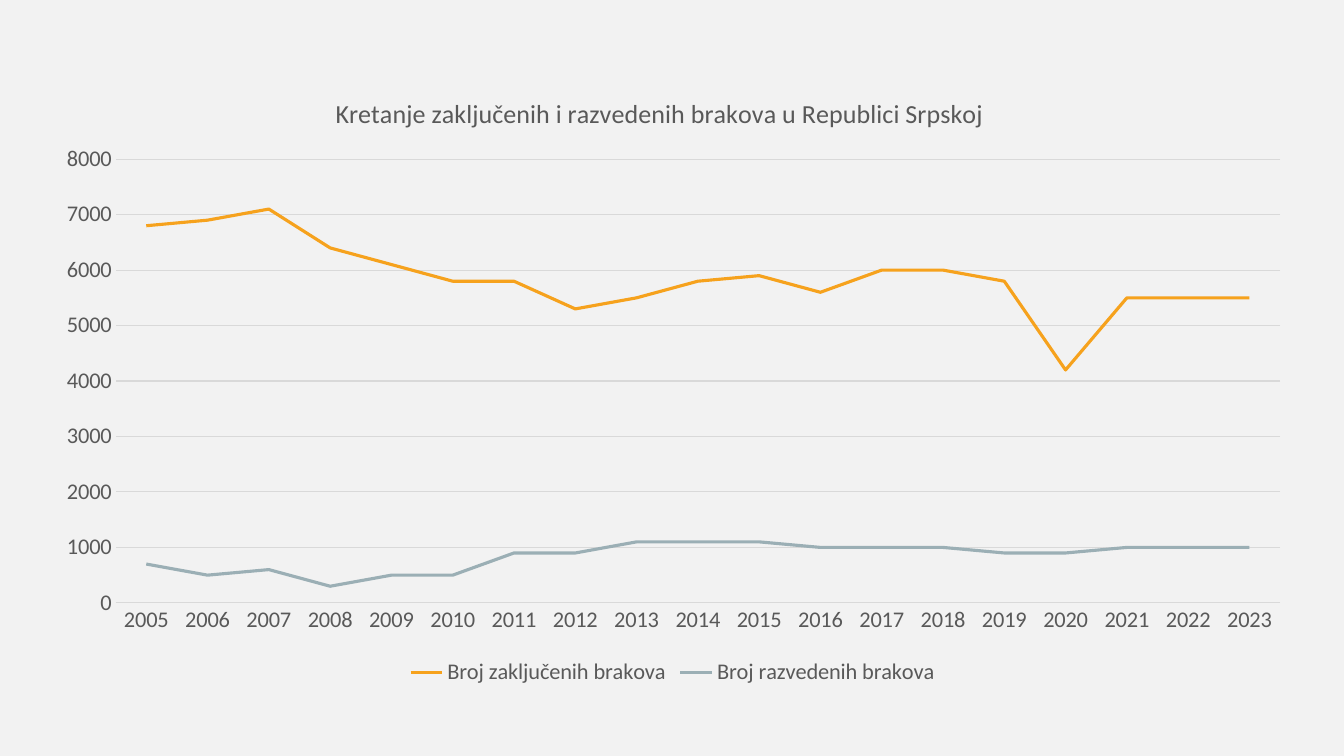
from lxml.etree import SubElement
from pptx import Presentation
from pptx.chart.data import CategoryChartData
from pptx.dml.color import RGBColor
from pptx.enum.chart import XL_CHART_TYPE, XL_LEGEND_POSITION, XL_MARKER_STYLE, XL_TICK_MARK
from pptx.oxml.ns import qn
from pptx.util import Cm, Pt

# Content
TITLE = "Kretanje zaključenih i razvedenih brakova u Republici Srpskoj"
YEARS = [str(year) for year in range(2005, 2024)]
SERIES = [
    ("Broj zaključenih brakova", "orange",
     (6800, 6900, 7100, 6400, 6100, 5800, 5800, 5300, 5500, 5800,
      5900, 5600, 6000, 6000, 5800, 4200, 5500, 5500, 5500)),
    ("Broj razvedenih brakova", "steel",
     (700, 500, 600, 300, 500, 500, 900, 900, 1100, 1100,
      1100, 1000, 1000, 1000, 900, 900, 1000, 1000, 1000)),
]
COLORS = {"back": "F2F2F2", "text": "595959", "grid": "D9D9D9",
          "orange": "F6A21D", "steel": "9BAFB5"}


def color(name):
    return RGBColor.from_string(COLORS[name])


def style(font, size=16, tint="text"):
    font.name, font.size, font.bold = "Calibri", Pt(size), False
    font.color.rgb = color(tint)


def write(frame, text, **form):
    frame.text = text
    style(frame.paragraphs[0].runs[0].font, **form)


def stroke(line, tint, width):
    line.color.rgb = color(tint)
    line.width = Pt(width)


def place(part, after, **share):
    """Set a manual layout, in shares of the chart's size."""
    for old in part.findall(qn("c:layout")):
        part.remove(old)
    layout = SubElement(part, qn("c:layout"))
    if after is None:
        part.insert(0, layout)
    else:
        after.addnext(layout)
    manual = SubElement(layout, qn("c:manualLayout"))
    if "w" in share:
        SubElement(manual, qn("c:layoutTarget")).set("val", "inner")
    for key in ("x", "y"):
        SubElement(manual, qn(f"c:{key}Mode")).set("val", "edge")
    for key, value in share.items():
        SubElement(manual, qn(f"c:{key}")).set("val", str(value))


# Slide
deck = Presentation()
deck.slide_width, deck.slide_height = Cm(33.87), Cm(19.05)
slide = deck.slides.add_slide(deck.slide_layouts[6])
slide.background.fill.solid()
slide.background.fill.fore_color.rgb = color("back")

# Chart
data = CategoryChartData()
data.categories = YEARS
for name, _, values in SERIES:
    data.add_series(name, values)
chart = slide.shapes.add_chart(
    XL_CHART_TYPE.LINE, Cm(1), Cm(1.65), Cm(31.9), Cm(15.75), data).chart
style(chart.font)
chart.plots[0].vary_by_categories = False
for line, (_, tint, _) in zip(chart.plots[0].series, SERIES):
    line.smooth = False
    line.marker.style = XL_MARKER_STYLE.NONE
    stroke(line.format.line, tint, 2.25)

# Title and legend
chart.has_title = True
write(chart.chart_title.text_frame, TITLE, size=18.6)
chart.has_legend = True
chart.legend.position = XL_LEGEND_POSITION.BOTTOM
chart.legend.include_in_layout = False
style(chart.legend.font)

# Axes
years, counts = chart.category_axis, chart.value_axis
for axis in (years, counts):
    axis.major_tick_mark = axis.minor_tick_mark = XL_TICK_MARK.NONE
    style(axis.tick_labels.font)
stroke(years.format.line, "grid", 0.75)
counts.format.line.fill.background()
counts.minimum_scale, counts.maximum_scale, counts.major_unit = 0, 8000, 1000
counts.has_major_gridlines = True
stroke(counts.major_gridlines.format.line, "grid", 0.75)

# Places within the chart
head = chart.chart_title._element
place(head, head.find(qn("c:tx")), x=0.23, y=0.04)
plot = chart._chartSpace.chart.plotArea
place(plot, None, x=0.06, y=0.15, w=0.92, h=0.71)

deck.save("out.pptx")
